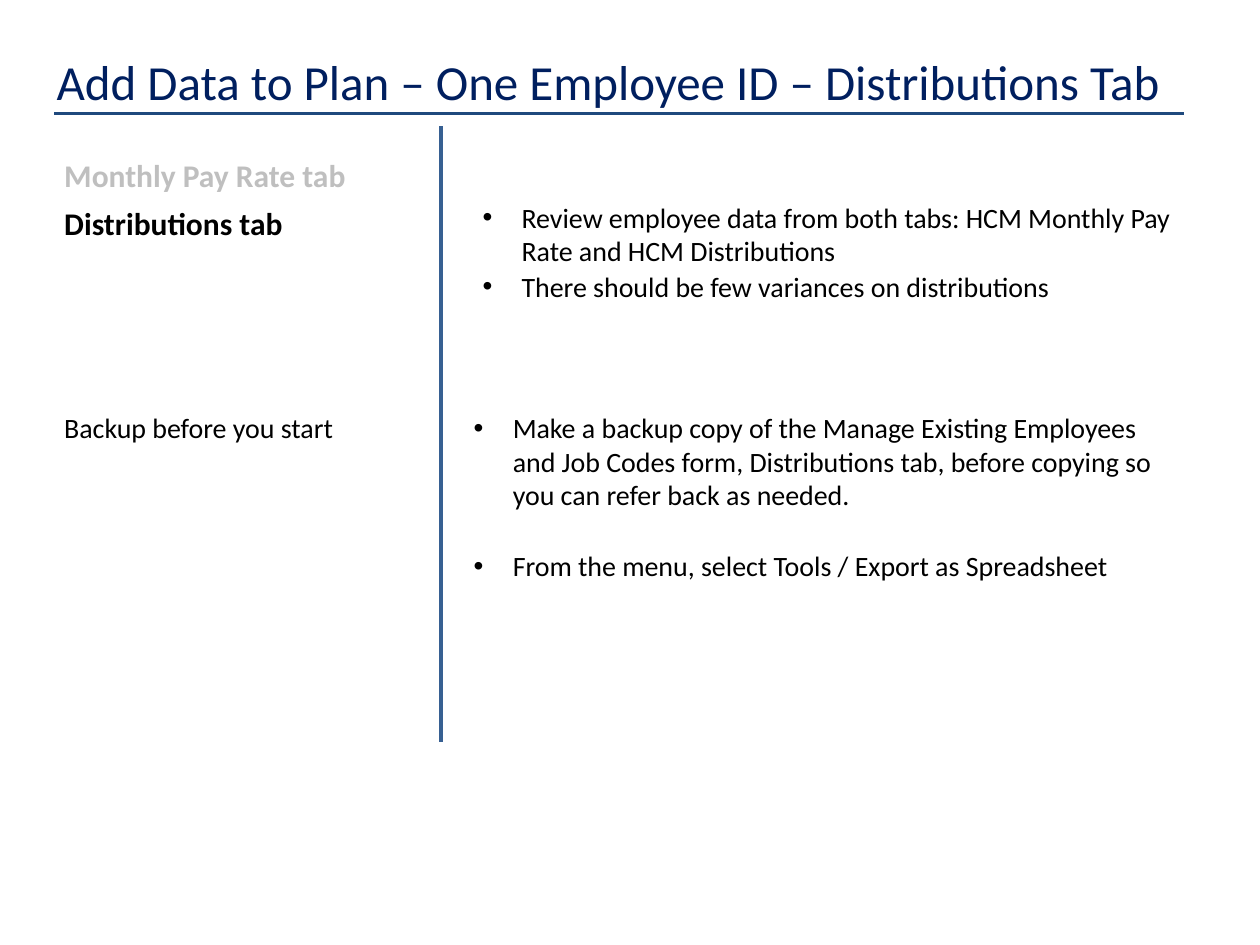
from dataclasses import dataclass
from lxml import etree
from pptx import Presentation, util as u
from pptx.dml.color import RGBColor
from pptx.enum import shapes, text
from pptx.oxml.ns import qn


@dataclass(frozen=True)
class Theme:
    font: str = "Calibri"
    navy: str = "001F5F"
    rule: str = "1F497D"
    split: str = "376092"
    gray: str = "BFBFBF"
    black: str = "000000"
    head: int = 28
    tab: int = 18
    body: int = 16
    line: float = 1.75


T = Theme()
W, H = 10, 7.5

# Content: each paragraph is (words, colour, space before, space after)
TITLE = "Add Data to Plan – One Employee ID – Distributions Tab"
TABS = [
    ("Monthly Pay Rate tab", T.gray, 0, 6),
    ("Distributions tab", T.black, 0, 6),
]
REVIEW = [
    ("Review employee data from both tabs: HCM Monthly Pay Rate "
     "and HCM Distributions", T.black, 0.9, 0),
    ("There should be few variances on distributions", T.black, 0.9, 0),
]
BACKUP = [("Backup before you start", T.black, 0.9, 0)]
STEPS = [
    ("Make a backup copy of the Manage Existing Employees and Job Codes form, "
     "Distributions tab, before copying so you can refer back as needed.",
     T.black, 0.9, 0),
    ("From the menu, select Tools / Export as Spreadsheet", T.black, 21.3, 0),
]

# Layout: shares of the slide
LEFT, SPLIT, RIGHT = 0.05 * W, 0.35 * W, 0.94 * W
NOTE = 0.557 * W
ROW = 3.25 / 7.5 * H
BLOCKS = [
    (TABS, (LEFT, 0.164 * H, 0.275 * W, 0.7), T.tab, True, False),
    (REVIEW, (0.381 * W, 1.58, NOTE, 1.12), T.body, False, True),
    (BACKUP, (LEFT, ROW, 0.25 * W, 0.28), T.body, False, False),
    (STEPS, (0.374 * W, ROW, NOTE, 1.67), T.body, False, True),
]
RULES = [
    ((0.043 * W, 0.12 * H), (RIGHT, 0.12 * H), T.rule),
    ((SPLIT, 1), (SPLIT, 5.89), T.split),
]


def setup(frame):
    frame.word_wrap = True
    frame.auto_size = text.MSO_AUTO_SIZE.NONE
    frame.vertical_anchor = text.MSO_ANCHOR.TOP
    frame.margin_left = frame.margin_right = frame.margin_bottom = 0
    frame.margin_top = u.Inches(0.01)


def write(para, words, size, color, bold=False, before=0, after=0):
    para.alignment = text.PP_ALIGN.LEFT
    para.space_before, para.space_after = u.Pt(before), u.Pt(after)
    run = para.add_run()
    run.text = words
    font = run.font
    font.name, font.size, font.bold = T.font, u.Pt(size), bold
    font.color.rgb = RGBColor.from_string(color)


def indent(para, bullet):
    props = para._p.get_or_add_pPr()
    left, hang = (0.33, -0.31) if bullet else (0.01, 0)
    props.set("marL", str(u.Inches(left)))
    props.set("indent", str(u.Inches(hang)))
    if bullet:
        etree.SubElement(props, qn("a:buFont")).set("typeface", "Arial")
        etree.SubElement(props, qn("a:buChar")).set("char", "•")


def place(shape, box):
    shape.left, shape.top, shape.width, shape.height = map(u.Inches, box)


def add_block(slide, paras, box, size, bold, bullet):
    frame = slide.shapes.add_textbox(*map(u.Inches, box)).text_frame
    setup(frame)
    for i, (words, color, before, after) in enumerate(paras):
        para = frame.add_paragraph() if i else frame.paragraphs[0]
        write(para, words, size, color, bold, before, after)
        indent(para, bullet)


def add_rule(slide, start, end, color):
    line = slide.shapes.add_connector(
        shapes.MSO_CONNECTOR.STRAIGHT, *map(u.Inches, start + end))
    line.line.color.rgb = RGBColor.from_string(color)
    line.line.width = u.Pt(T.line)
    etree.SubElement(line._element.spPr, qn("a:effectLst"))


def main():
    deck = Presentation()
    deck.slide_width, deck.slide_height = u.Inches(W), u.Inches(H)
    slide = deck.slides.add_slide(deck.slide_layouts[5])

    # Title
    title = slide.shapes.title
    place(title, (0.044 * W, 0.4, 0.898 * W, 0.49))
    setup(title.text_frame)
    para = title.text_frame.paragraphs[0]
    write(para, TITLE, T.head, T.navy, before=1)
    indent(para, False)

    # Rules and text columns
    for rule in RULES:
        add_rule(slide, *rule)
    for block in BLOCKS:
        add_block(slide, *block)

    deck.save("out.pptx")


if __name__ == "__main__":
    main()
